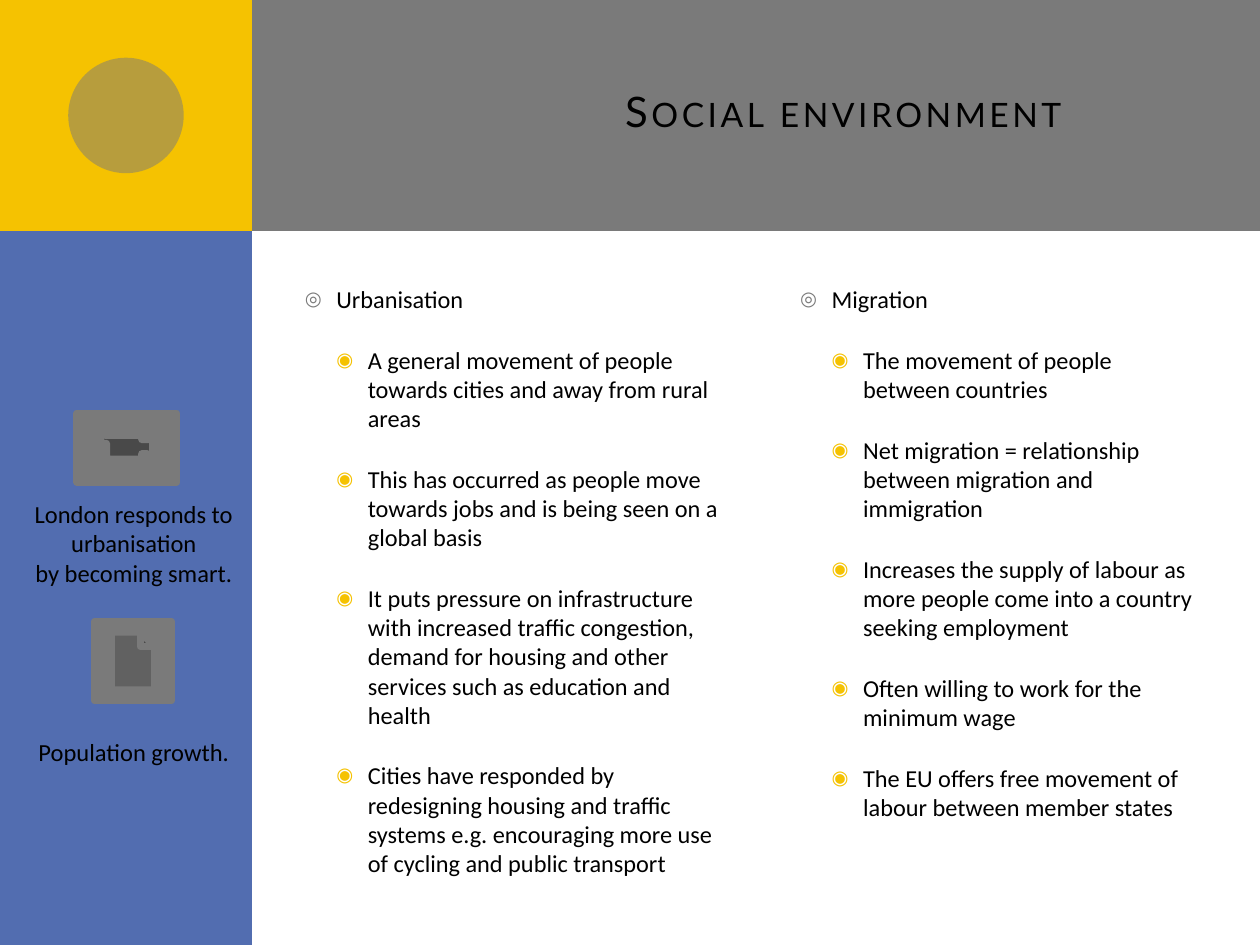
from lxml.etree import SubElement
from pptx import Presentation
from pptx.dml.color import RGBColor
from pptx.enum.shapes import MSO_SHAPE
from pptx.enum.text import MSO_ANCHOR, MSO_AUTO_SIZE, PP_ALIGN
from pptx.oxml.ns import qn
from pptx.util import Pt

GREY = RGBColor(0x7A, 0x7A, 0x7A)
BLUE = RGBColor(0x52, 0x6D, 0xB0)
YELLOW = RGBColor(0xF5, 0xC2, 0x01)
BLACK = RGBColor(0, 0, 0)

SLIDE_W, SLIDE_H = 720, 540
SIDEBAR_W, HEADER_H = 144, 132
INDENT = 18
BULLETS = [("◎", GREY), ("◉", YELLOW)]  # one per list level

URBANISATION = [
    "A general movement of people towards cities and away from rural areas",
    "This has occurred as people move towards jobs and is being seen on a global basis",
    "It puts pressure on infrastructure with increased traffic congestion, demand for "
    "housing and other services such as education and health",
    "Cities have responded by redesigning housing and traffic systems e.g. encouraging "
    "more use of cycling and public transport",
]
MIGRATION = [
    "The movement of people between countries",
    "Net migration = relationship between migration and immigration",
    "Increases the supply of labour as more people come into a country seeking employment",
    "Often willing to work for the minimum wage",
    "The EU offers free movement of labour between member states",
]


def place(sp, x, y, w, h):
    sp.left, sp.top, sp.width, sp.height = Pt(x), Pt(y), Pt(w), Pt(h)


def add_run(p, text, size, font="Calibri"):
    r = p.add_run()
    r.text = text
    r.font.size, r.font.name = Pt(size), font
    r.font.color.rgb = BLACK
    return r


def add_block(s, kind, x, y, w, h, color, line_width=0, alpha=None):
    sp = s.shapes.add_shape(kind, Pt(x), Pt(y), Pt(w), Pt(h))
    sp.shadow.inherit = False
    sp.fill.solid()
    sp.fill.fore_color.rgb = color
    if line_width:
        sp.line.color.rgb = color
        sp.line.width = Pt(line_width)
    else:
        sp.line.fill.background()
    if alpha is not None:
        clr = sp._element.spPr.find(qn("a:solidFill"))[0]
        SubElement(clr, qn("a:alpha"), val=str(alpha * 1000))


def set_bullet(p, level):
    char, color = BULLETS[level]
    pPr = p._p.get_or_add_pPr()
    pPr.set("marL", str(Pt(INDENT * (level + 1))))
    pPr.set("indent", str(Pt(-INDENT)))
    clr = SubElement(pPr, qn("a:buClr"))
    SubElement(clr, qn("a:srgbClr"), val=str(color))
    SubElement(pPr, qn("a:buSzPct"), val="80000")
    SubElement(pPr, qn("a:buChar"), char=char)


def fill_title(sp, text):
    place(sp, 192, 18, 492, 90)
    tf = sp.text_frame
    tf.auto_size = MSO_AUTO_SIZE.NONE
    tf.vertical_anchor = MSO_ANCHOR.MIDDLE
    tf.margin_right = Pt(41)
    p = tf.paragraphs[0]
    p.alignment = PP_ALIGN.RIGHT
    rPr = add_run(p, text, 24, "Lato").font._element
    rPr.set("cap", "small")
    rPr.set("spc", "200")


def fill_list(sp, x, w, heading, items):
    place(sp, x, 159, w, 323)
    tf = sp.text_frame
    tf.auto_size = MSO_AUTO_SIZE.NONE
    for i, text in enumerate([heading, *items]):
        p = tf.add_paragraph() if i else tf.paragraphs[0]
        p.level = min(i, 1)
        p.space_before = Pt(18)
        set_bullet(p, p.level)
        add_run(p, text, 13.9)


def add_caption(s, x, y, w, h, lines):
    tf = s.shapes.add_textbox(Pt(x), Pt(y), Pt(w), Pt(h)).text_frame
    tf.word_wrap = True
    tf.auto_size = MSO_AUTO_SIZE.SHAPE_TO_FIT_TEXT
    for i, text in enumerate(lines):
        p = tf.add_paragraph() if i else tf.paragraphs[0]
        p.alignment = PP_ALIGN.CENTER
        add_run(p, text, 14)


def main():
    prs = Presentation()
    prs.slide_width, prs.slide_height = Pt(SLIDE_W), Pt(SLIDE_H)
    s = prs.slides.add_slide(prs.slide_layouts[3])
    title, left, right = list(s.placeholders)

    # Background bands and circle
    add_block(s, MSO_SHAPE.RECTANGLE, 36, 0, SLIDE_W - 36, HEADER_H, GREY)
    add_block(s, MSO_SHAPE.RECTANGLE, 0, 0, SIDEBAR_W, SLIDE_H, BLUE)
    add_block(s, MSO_SHAPE.RECTANGLE, 0, 0, SIDEBAR_W, HEADER_H, YELLOW)
    add_block(s, MSO_SHAPE.OVAL, 39, 33, 66, 66, GREY, alpha=50)

    # Title and the two lists, in front of the bands
    for sp in (title, left, right):
        s.shapes._spTree.append(sp._element)
    fill_title(title, "Social environment")
    fill_list(left, 167, 258.5, "Urbanisation", URBANISATION)
    fill_list(right, 450, 245, "Migration", MIGRATION)

    # Sidebar buttons with captions
    add_block(s, MSO_SHAPE.ACTION_BUTTON_MOVIE, 44, 236, 57, 39.5, GREY, line_width=4)
    add_caption(s, 8.5, 281.5, 136, 58,
                ["London responds to urbanisation", "by becoming smart."])
    add_block(s, MSO_SHAPE.ACTION_BUTTON_DOCUMENT, 54, 355, 44, 45.5, GREY, line_width=4)
    add_caption(s, 11.5, 417.5, 130, 24.5, ["Population growth."])

    prs.save("out.pptx")


if __name__ == "__main__":
    main()
